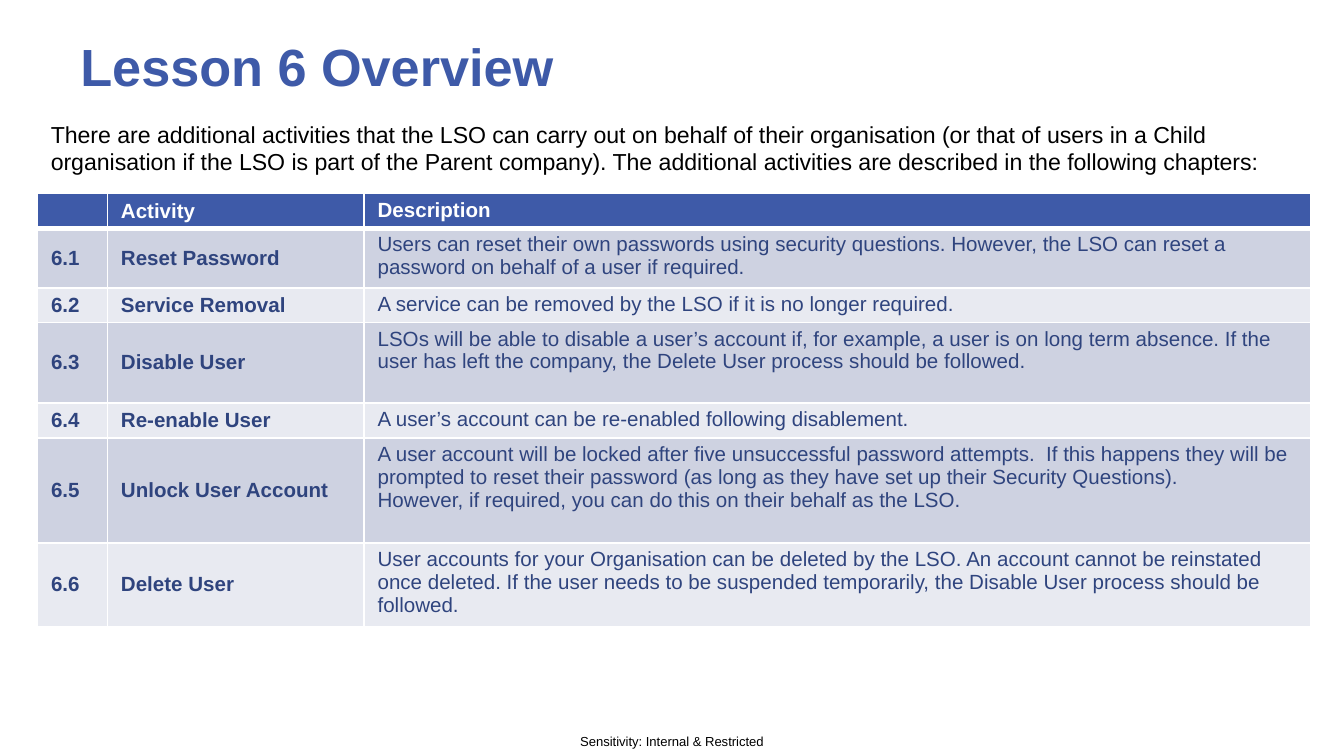
import pptx
import pptx.util
import pptx.dml.color
import pptx.enum.text
from lxml import etree

SLIDE_W = 10
SLIDE_H = SLIDE_W * 9 / 16
FONT = "Arial"
COLORS = {
    "brand": "3E5AA8",
    "cell_text": "2F447E",
    "band_dark": "CED2E1",
    "band_light": "E8EAF1",
    "white": "FFFFFF",
    "black": "000000",
}
ALIGN = pptx.enum.text.PP_ALIGN
ANCHOR = pptx.enum.text.MSO_ANCHOR

HEADINGS = ("", "Activity", "Description")
ACTIVITIES = [
    ("6.1", "Reset Password",
     "Users can reset their own passwords using security questions. However, "
     "the LSO can reset a password on behalf of a user if required."),
    ("6.2", "Service Removal",
     "A service can be removed by the LSO if it is no longer required."),
    ("6.3", "Disable User",
     "LSOs will be able to disable a user’s account if, for example, a user is "
     "on long term absence. If the user has left the company, the Delete User "
     "process should be followed."),
    ("6.4", "Re-enable User",
     "A user’s account can be re-enabled following disablement."),
    ("6.5", "Unlock User Account",
     "A user account will be locked after five unsuccessful password attempts.  "
     "If this happens they will be prompted to reset their password (as long as "
     "they have set up their Security Questions).\n"
     "However, if required, you can do this on their behalf as the LSO."),
    ("6.6", "Delete User",
     "User accounts for your Organisation can be deleted by the LSO. An account "
     "cannot be reinstated once deleted. If the user needs to be suspended "
     "temporarily, the Disable User process should be followed."),
]
COLUMN_PARTS = (0.52, 1.91, 7.04)
ROW_PARTS = (0.25, 0.42, 0.25, 0.6, 0.25, 0.78, 0.6)


def rgb(name):
    return pptx.dml.color.RGBColor.from_string(COLORS[name])


def share_box(left, top, width, height):
    """Turn shares of the slide's size into lengths."""
    inches = pptx.util.Inches
    return (inches(left * SLIDE_W), inches(top * SLIDE_H),
            inches(width * SLIDE_W), inches(height * SLIDE_H))


def write(frame, text, size, color, bold=False, align=ALIGN.LEFT):
    for index, line in enumerate(text.split("\n")):
        paragraph = frame.add_paragraph() if index else frame.paragraphs[0]
        paragraph.alignment = align
        run = paragraph.add_run()
        run.text = line
        run.font.name = FONT
        run.font.size = pptx.util.Pt(size)
        run.font.bold = bold
        run.font.color.rgb = rgb(color)


def add_text(slide, box, text, size, color, bold=False, align=ALIGN.LEFT,
             anchor=ANCHOR.TOP, inset=True):
    frame = slide.shapes.add_textbox(*box).text_frame
    frame.word_wrap = True
    frame.vertical_anchor = anchor
    if not inset:
        frame.margin_left = frame.margin_right = 0
        frame.margin_top = frame.margin_bottom = 0
    write(frame, text, size, color, bold, align)


def add_borders(cell, bottom_width):
    properties = cell._tc.get_or_add_tcPr()
    sides = {"lnL": 1, "lnR": 1, "lnT": 1, "lnB": bottom_width}
    for position, (side, width) in enumerate(sides.items()):
        line = etree.Element(pptx.oxml.ns.qn(f"a:{side}"),
                             w=str(pptx.util.Pt(width)))
        fill = etree.SubElement(line, pptx.oxml.ns.qn("a:solidFill"))
        etree.SubElement(fill, pptx.oxml.ns.qn("a:srgbClr"), val=COLORS["white"])
        properties.insert(position, line)


def fill_cell(cell, text, fill, color, bold, anchor, bottom_width):
    cell.margin_left = cell.margin_right = pptx.util.Inches(0.1)
    cell.margin_top = cell.margin_bottom = pptx.util.Pt(2.7)
    cell.vertical_anchor = anchor
    cell.fill.solid()
    cell.fill.fore_color.rgb = rgb(fill)
    add_borders(cell, bottom_width)
    if text:
        write(cell.text_frame, text, 11, color, bold)
    else:
        # An empty cell keeps the row low only with a small end-of-text size
        etree.SubElement(cell.text_frame.paragraphs[0]._p,
                         pptx.oxml.ns.qn("a:endParaRPr"), sz="1100")


def add_activity_table(slide, box):
    width, height = box[2:]
    rows = [HEADINGS, *ACTIVITIES]
    table = slide.shapes.add_table(len(rows), len(HEADINGS), *box).table
    for column, part in zip(table.columns, COLUMN_PARTS):
        column.width = int(width * part / sum(COLUMN_PARTS))
    for row, part in zip(table.rows, ROW_PARTS):
        row.height = int(height * part / sum(ROW_PARTS))

    for r, texts in enumerate(rows):
        header = r == 0
        fill = "brand" if header else "band_dark" if r % 2 else "band_light"
        color = "white" if header else "cell_text"
        for c, text in enumerate(texts):
            description = c == len(HEADINGS) - 1
            fill_cell(table.cell(r, c), text, fill, color,
                      bold=header or not description,
                      anchor=ANCHOR.TOP if description else ANCHOR.MIDDLE,
                      bottom_width=3 if header else 1)


def add_overview_slide(presentation):
    slide = presentation.slides.add_slide(presentation.slide_layouts[6])
    # Sensitivity label
    add_text(slide, share_box(0.418, 0.96, 0.164, 0.04),
             "Sensitivity: Internal & Restricted", 7, "black",
             align=ALIGN.CENTER, anchor=ANCHOR.MIDDLE, inset=False)
    # Title
    add_text(slide, share_box(0.05, 0.025, 0.9, 0.125), "Lesson 6 Overview",
             28, "brand", bold=True, anchor=ANCHOR.MIDDLE)
    # Introduction
    add_text(slide, share_box(0.028, 0.15, 0.95, 0.112),
             "There are additional activities that the LSO can carry out on behalf "
             "of their organisation (or that of users in a Child organisation if "
             "the LSO is part of the Parent company). The additional activities "
             "are described in the following chapters:", 12.4, "black")
    # Activities
    add_activity_table(slide, share_box(0.028, 0.256, 0.947, 0.56))


def main():
    presentation = pptx.Presentation()
    presentation.slide_width = pptx.util.Inches(SLIDE_W)
    presentation.slide_height = pptx.util.Inches(SLIDE_H)
    add_overview_slide(presentation)
    presentation.save("out.pptx")


if __name__ == "__main__":
    main()
